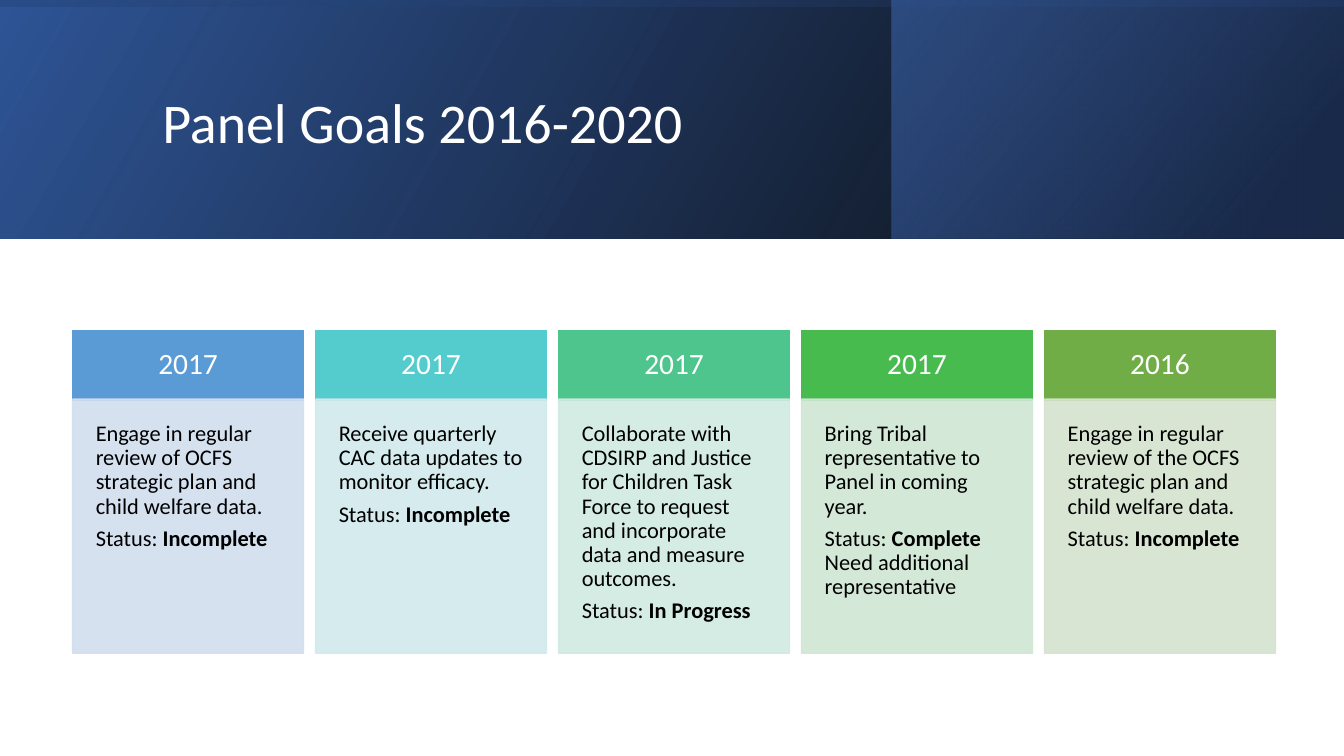
"""Build the Panel Goals 2016-2020 slide: a gradient banner above five goal cards."""
from dataclasses import dataclass

from lxml.etree import SubElement
from pptx import Presentation
from pptx.dml.color import RGBColor
from pptx.enum.shapes import MSO_SHAPE
from pptx.enum.text import MSO_ANCHOR, PP_ALIGN
from pptx.oxml.ns import qn
from pptx.util import Pt

EMU_PER_PX = 9144


@dataclass(frozen=True)
class Theme:
    font: str = "Calibri"
    title_size: int = 40
    year_size: int = 21
    goal_size: int = 16
    light: str = "FFFFFF"
    dark: str = "000000"
    goal_opacity: int = 90
    years: tuple = ("5B9BD5", "54CCCD", "4DC58D", "48BB4F", "70AD47")
    goals: tuple = ("D2DEEF", "D1E9ED", "D0EAE1", "D0E6D4", "D5E3CF")
    full_banner: tuple = ((0, "000000", 96), (100, "2F5597", 100))
    right_banner: tuple = ((19, "203864", 68), (100, "4472C4", 48))
    banner_shade: tuple = ((23, "2F5597", 16), (99, "000000", 45))


theme = Theme()


def add_rectangle(slide, *box):
    shape = slide.shapes.add_shape(MSO_SHAPE.RECTANGLE, *(px * EMU_PER_PX for px in box))
    shape.shadow.inherit = False
    return shape


def write_text(shape, paragraphs, *, size, color, align=PP_ALIGN.LEFT,
               anchor=MSO_ANCHOR.MIDDLE, inset=10, space_after=0):
    frame = shape.text_frame
    frame.word_wrap = True
    frame.vertical_anchor = anchor
    frame.margin_left = frame.margin_right = inset * EMU_PER_PX
    frame.margin_top = frame.margin_bottom = inset * EMU_PER_PX
    for index, runs in enumerate(paragraphs):
        paragraph = frame.add_paragraph() if index else frame.paragraphs[0]
        paragraph.alignment = align
        paragraph.line_spacing = 0.9
        paragraph.space_before = Pt(0)
        paragraph.space_after = Pt(space_after)
        for text, bold in runs:
            run = paragraph.add_run()
            run.text = text
            run.font.name = theme.font
            run.font.size = Pt(size)
            run.font.bold = bold
            run.font.color.rgb = RGBColor.from_string(color)


presentation = Presentation()
presentation.slide_width = 1333 * EMU_PER_PX
presentation.slide_height = 750 * EMU_PER_PX
slide = presentation.slides.add_slide(presentation.slide_layouts[5])

banners = [
    ((0, 0, 1333, 237), 0, 330, theme.full_banner),
    ((884, 0, 449, 237), 0, 320, theme.right_banner),
    ((548, -548, 237, 1333), 270, 350, theme.banner_shade),
]
for box, rotation, angle, stops in banners:
    banner = add_rectangle(slide, *box)
    banner.rotation = rotation
    banner.line.fill.background()
    properties = banner._element.spPr
    properties.find(qn("a:xfrm")).set("flipH", "1")
    gradient = SubElement(properties, qn("a:gradFill"), rotWithShape="1")
    properties.find(qn("a:prstGeom")).addnext(gradient)
    stop_list = SubElement(gradient, qn("a:gsLst"))
    for position, color, opacity in stops:
        stop = SubElement(stop_list, qn("a:gs"), pos=str(position * 1000))
        stop_color = SubElement(stop, qn("a:srgbClr"), val=color)
        SubElement(stop_color, qn("a:alpha"), val=str(opacity * 1000))
    SubElement(gradient, qn("a:lin"), ang=str(angle * 60000), scaled="0")

title = slide.shapes.title
title.left, title.top, title.width, title.height = (
    px * EMU_PER_PX for px in (151, 38, 1063, 172))
write_text(title, [[("Panel Goals 2016-2020", False)]],
           size=theme.title_size, color=theme.light)
slide.shapes._spTree.append(title._element)

cards = [
    ("2017", "Engage in regular review of OCFS strategic plan and child welfare data.",
     [("Incomplete", True)]),
    ("2017", "Receive quarterly CAC data updates to monitor efficacy.",
     [("Incomplete", True)]),
    ("2017", "Collaborate with CDSIRP and Justice for Children Task Force to request "
     "and incorporate data and measure outcomes.", [("In Progress", True)]),
    ("2017", "Bring Tribal representative to Panel in coming year.",
     [("Complete ", True), ("Need additional representative", False)]),
    ("2016", "Engage in regular review of the OCFS strategic plan and child welfare data.",
     [("Incomplete", True)]),
]
card_left, card_pitch, card_width = 72, 241, 229
for index, (year, goal, status) in enumerate(cards):
    left = card_left + index * card_pitch
    year_box = add_rectangle(slide, left, 328, card_width, 69)
    goal_box = add_rectangle(slide, left, 396, card_width, 252)
    for shape, color in ((year_box, theme.years[index]), (goal_box, theme.goals[index])):
        shape.fill.solid()
        shape.fill.fore_color.rgb = RGBColor.from_string(color)
        shape.line.color.rgb = RGBColor.from_string(color)
        shape.line.width = Pt(1)
    for color_element in goal_box._element.spPr.iter(qn("a:srgbClr")):
        SubElement(color_element, qn("a:alpha"), val=str(theme.goal_opacity * 1000))
    write_text(year_box, [[(year, False)]], size=theme.year_size, color=theme.light,
               align=PP_ALIGN.CENTER, inset=18)
    write_text(goal_box, [[(goal, False)], [("Status: ", False), *status]],
               size=theme.goal_size, color=theme.dark, anchor=MSO_ANCHOR.TOP,
               inset=23, space_after=5.6)

presentation.save("out.pptx")
